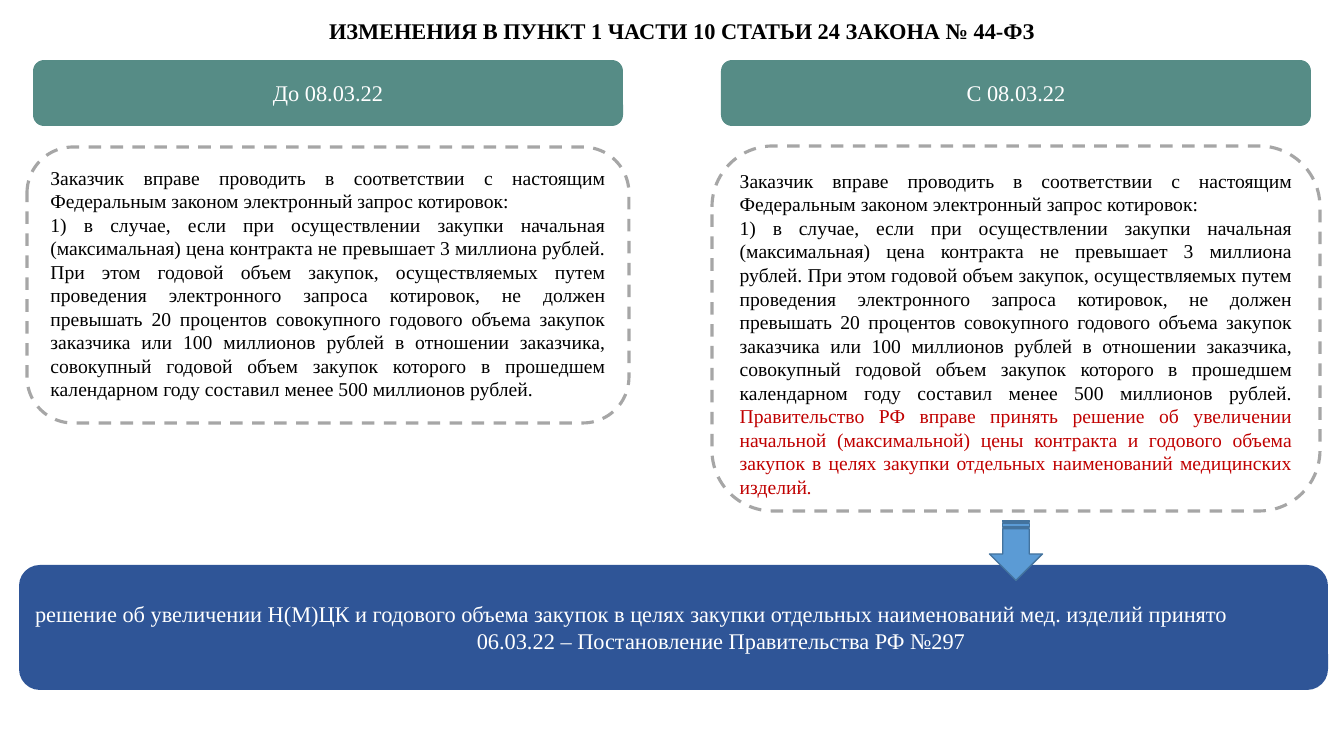
from pptx import Presentation
from pptx import util as u
from pptx.dml.color import RGBColor
from pptx.enum import dml, shapes, text

PX = 12192000 / 1344
THEME = {
    "font": "Times New Roman", "heading": 16, "body": 14,
    "ink": "000000", "light": "FFFFFF", "accent": "C00000",
    "header": "568C86", "decision": "2F5597", "dash": "A6A6A6",
    "arrow": "5B9BD5", "arrow_edge": "43739E",
}


def add_block(kind, bounds, fill=None, line=None, width=1):
    block = page.shapes.add_shape(kind, *[round(n * PX) for n in bounds])
    block.shadow.inherit = False
    for paint, color in ((block.fill, fill), (block.line.fill, line)):
        if color:
            paint.solid()
            paint.fore_color.rgb = RGBColor.from_string(THEME[color])
        else:
            paint.background()
    if line:
        block.line.width = u.Pt(width)
    return block


def write(box, paragraphs, size, align, anchor):
    frame = box.text_frame
    frame.word_wrap = True
    frame.vertical_anchor = anchor
    for index, runs in enumerate(paragraphs):
        para = frame.add_paragraph() if index else frame.paragraphs[0]
        para.alignment = align
        for words, color in runs:
            span = para.add_run()
            span.text = words
            span.font.name = THEME["font"]
            span.font.size = u.Pt(THEME[size])
            span.font.color.rgb = RGBColor.from_string(THEME[color])
    return frame.paragraphs


ROUNDED = shapes.MSO_SHAPE.ROUNDED_RECTANGLE
ALIGN = text.PP_ALIGN
ANCHOR = text.MSO_ANCHOR

deck = Presentation()
deck.slide_width, deck.slide_height = round(1344 * PX), round(756 * PX)
page = deck.slides.add_slide(deck.slide_layouts[5])

title = page.shapes.title
title.left, title.top, title.width, title.height = [round(n * PX) for n in (36, 5, 1292, 44)]
heading = write(title, [[("ИЗМЕНЕНИЯ В ПУНКТ 1 ЧАСТИ 10 СТАТЬИ 24 ЗАКОНА № 44-ФЗ", "ink")]],
                "heading", ALIGN.CENTER, ANCHOR.BOTTOM)[0]
heading.line_spacing = 0.9
heading.runs[0].font.bold = True

intro = ("Заказчик вправе проводить в соответствии с настоящим Федеральным законом "
         "электронный запрос котировок:")
rule = ("1) в случае, если при осуществлении закупки начальная (максимальная) цена контракта "
        "не превышает 3 миллиона рублей. При этом годовой объем закупок, осуществляемых путем "
        "проведения электронного запроса котировок, не должен превышать 20 процентов "
        "совокупного годового объема закупок заказчика или 100 миллионов рублей в отношении "
        "заказчика, совокупный годовой объем закупок которого в прошедшем календарном году "
        "составил менее 500 миллионов рублей.")
addition = ("Правительство РФ вправе принять решение об увеличении начальной (максимальной) "
            "цены контракта и годового объема закупок в целях закупки отдельных наименований "
            "медицинских изделий")

columns = [
    ("До 08.03.22", 33, (27, 147, 602, 276), [(rule, "ink")]),
    ("С 08.03.22", 721, (712, 146, 608, 365),
     [(rule + " ", "ink"), (addition, "accent"), (".", "accent")]),
]
for date, left, bounds, rule_runs in columns:
    header = add_block(ROUNDED, (left, 60, 590, 66), fill="header")
    write(header, [[(date, "light")]], "heading", ALIGN.CENTER, ANCHOR.MIDDLE)
    panel = add_block(ROUNDED, bounds, line="dash", width=2.25)
    panel.line.dash_style = dml.MSO_LINE.DASH
    paras = write(panel, [[(intro, "ink")], rule_runs], "body", ALIGN.JUSTIFY, ANCHOR.TOP)
paras[-1].runs[-1].font.italic = True

decision = add_block(ROUNDED, (19, 565, 1309, 125), fill="decision")
lines = write(decision, [
    [("решение об увеличении Н(М)ЦК и годового объема закупок в целях закупки "
      "отдельных наименований мед. изделий принято", "light")],
    [("06.03.22 – Постановление Правительства РФ №297", "light")],
], "heading", ALIGN.CENTER, ANCHOR.MIDDLE)
lines[0].alignment = ALIGN.LEFT
lines[1]._p.get_or_add_pPr().set("marL", str(round(95 * PX)))

arrow = add_block(shapes.MSO_SHAPE.STRIPED_RIGHT_ARROW, (986, 524, 60, 53),
                  fill="arrow", line="arrow_edge")
arrow.rotation = 90

deck.save("out.pptx")
